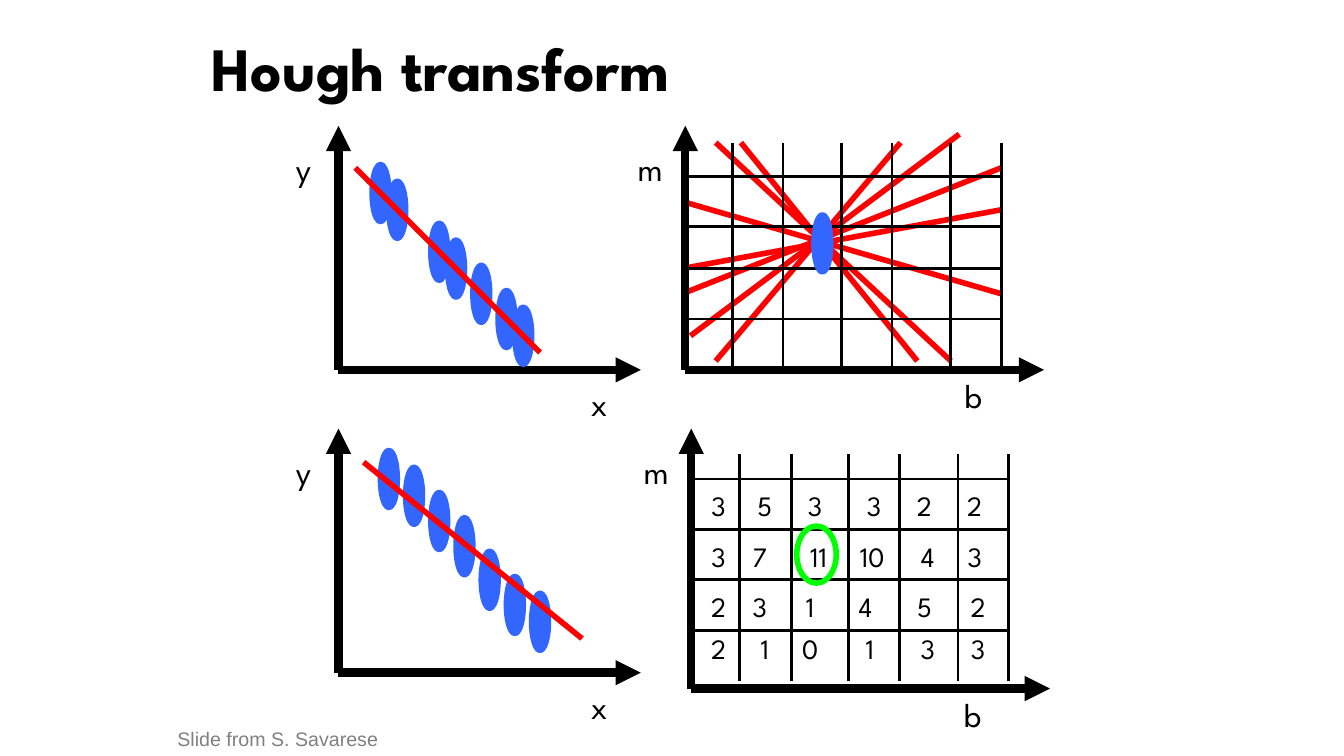
import collections

import lxml.etree
import pptx
import pptx.dml.color
import pptx.enum.shapes
import pptx.enum.text
import pptx.oxml.ns
import pptx.util

Cm = pptx.util.Cm
Box = collections.namedtuple("Box", "left top width height")

STEP = 2.54 / 12  # drawing grid, in cm
FONT = "League Spartan"
BLACK, RED, BLUE, GREEN, GREY = "000000", "FF0000", "3366FF", "00FF00", "808080"
POINT_SIZE = (2, 6.8)  # in steps


def color(value):
    return pptx.dml.color.RGBColor.from_string(value)


# Basic parts, all lengths in cm
def add_line(slide, start, end, line_color, width, arrow=False):
    line = slide.shapes.add_connector(
        pptx.enum.shapes.MSO_CONNECTOR.STRAIGHT,
        *(Cm(value) for value in (*start, *end)))
    line.line.color.rgb = color(line_color)
    line.line.width = pptx.util.Pt(width)
    qn = pptx.oxml.ns.qn
    if arrow:
        lxml.etree.SubElement(line.line._get_or_add_ln(), qn("a:tailEnd"), type="triangle")
    lxml.etree.SubElement(line._element.spPr, qn("a:effectLst"))


def add_ellipse(slide, position, size, line_color, filled=True):
    ellipse = slide.shapes.add_shape(
        pptx.enum.shapes.MSO_SHAPE.OVAL,
        *(Cm(value) for value in (*position, *size)))
    ellipse.shadow.inherit = False
    if filled:
        ellipse.fill.solid()
        ellipse.fill.fore_color.rgb = color(line_color)
    else:
        ellipse.fill.background()
    ellipse.line.color.rgb = color(line_color)
    ellipse.line.width = pptx.util.Pt(4)


def add_text(slide, box, text, size, font=FONT, text_color=BLACK, bold=False,
             wrap=False, align=pptx.enum.text.PP_ALIGN.LEFT):
    shape = slide.shapes.add_textbox(*(Cm(value) for value in box))
    frame = shape.text_frame
    frame.word_wrap = wrap
    frame.auto_size = pptx.enum.text.MSO_AUTO_SIZE.SHAPE_TO_FIT_TEXT
    paragraph = frame.paragraphs[0]
    paragraph.text = text
    paragraph.alignment = align
    paragraph.font.name = font
    paragraph.font.size = pptx.util.Pt(size)
    paragraph.font.bold = bold
    paragraph.font.color.rgb = color(text_color)


def add_centered(slide, center, top, text, size):
    width = 1.2
    add_text(slide, Box(center - width / 2, top, width, size * 0.053), text, size,
             align=pptx.enum.text.PP_ALIGN.CENTER)


def place(box, column, row):
    """Position in cm of a grid step counted from the box's top left corner."""
    return box.left + column * STEP, box.top + row * STEP


# Axes with the names of both variables
def add_axes(slide, box, horizontal, vertical, name_offset):
    origin = (box.left, box.top + box.height)
    add_line(slide, origin, (box.left, box.top), BLACK, 6, arrow=True)
    add_line(slide, origin, (box.left + box.width, origin[1]), BLACK, 6, arrow=True)
    add_centered(slide, box.left + name_offset[0], origin[1] + name_offset[1], horizontal, 24)
    add_centered(slide, box.left - 0.88, box.top + 0.43, vertical, 24)


# Image space: points and the line fitted to them
def add_image_space(slide, box, points, fit):
    add_axes(slide, box, "x", "y", (6.57, 0.2))
    for column, row in points:
        add_ellipse(slide, place(box, column, row + 0.6),
                    [side * STEP for side in POINT_SIZE], BLUE)
    add_line(slide, place(box, *fit[0]), place(box, *fit[1]), RED, 4)


def add_grid(slide, box, columns, rows, first, last):
    for row in rows:
        add_line(slide, place(box, 0, row), place(box, columns[-1], row), BLACK, 2)
    for column in columns:
        add_line(slide, place(box, column, first), place(box, column, last), BLACK, 2)


# Parameter space: one line for each point, all meeting in one cell
def add_parameter_space(slide, box):
    grid = box._replace(left=box.left - 0.08)
    rays = [((4, 28), (26, 2)), ((28, 28), (7, 2)), ((1, 25), (33, 1)),
            ((32, 28), (4, 2)), ((0, 17), (38, 10)), ((0, 20), (38, 5)),
            ((0, 9), (38, 20))]
    for start, end in rays:
        add_line(slide, place(grid, *start), place(grid, *end), RED, 4)
    add_axes(slide, box, "b", "m", (7.26, 0))
    add_grid(slide, grid, (6, 12, 19, 25, 32, 38), (6, 12, 17, 23), 2, 29)
    add_ellipse(slide, place(grid, 15.7, 10.6), [side * STEP for side in POINT_SIZE], BLUE)


# Accumulator: votes counted in each cell, the maximum circled
def add_accumulator(slide, box):
    grid = box._replace(left=box.left - 0.05)
    add_axes(slide, box, "b", "m", (7.09, 0))
    add_grid(slide, grid, (6, 12.2, 19, 25, 32, 38), (6, 12, 18, 24), 3, 30)
    votes = [  # top of the row, votes, centers of the votes
        (6.6, (3, 5, 3, 3, 2, 2), (3.5, 9, 15, 22, 28, 34)),
        (12.6, (3, 7, 11, 10, 4, 3), (3.5, 8.4, 15.4, 21.8, 28.4, 34)),
        (18.6, (2, 3, 1, 4, 5, 2), (3.5, 8.4, 14.4, 21, 28, 34.4)),
        (23.6, (2, 1, 0, 1, 3, 3), (3.5, 9, 14.4, 21.5, 28.4, 34.4)),
    ]
    for row, counts, centers in votes:
        for count, column in zip(counts, centers):
            add_centered(slide, *place(grid, column, row), str(count), 20)
    add_ellipse(slide, place(grid, 12.8, 11.6), (4.7 * STEP, 6.8 * STEP), GREEN, filled=False)


def main():
    presentation = pptx.Presentation()
    presentation.slide_width = Cm(33.87)
    presentation.slide_height = Cm(19.05)
    slide = presentation.slides.add_slide(presentation.slide_layouts[6])

    # Upper row
    add_image_space(slide, Box(8.53, 3.17, 7.62, 6.15),
                    [(column, column) for column in (21, 19, 16, 13, 11, 6, 4)],
                    ((2, 5), (24, 27)))
    add_parameter_space(slide, Box(17.27, 3.17, 9.04, 6.15))

    # Lower row
    rows = (2, 4, 7, 10, 14, 17, 19)
    add_image_space(slide, Box(8.53, 10.8, 7.62, 6.15),
                    [(5 + 3 * index, row) for index, row in enumerate(rows)],
                    ((3, 4), (29, 25)))
    add_accumulator(slide, Box(17.42, 10.8, 9.04, 6.55))

    # Title and credit
    add_text(slide, Box(5.08, 0.64, 14.81, 2.11), "Hough transform", 44, bold=True, wrap=True)
    add_text(slide, Box(4.22, 18.19, 5.59, 0.86), "Slide from S. Savarese", 14,
             font="Arial", text_color=GREY)

    presentation.save("out.pptx")


if __name__ == "__main__":
    main()
